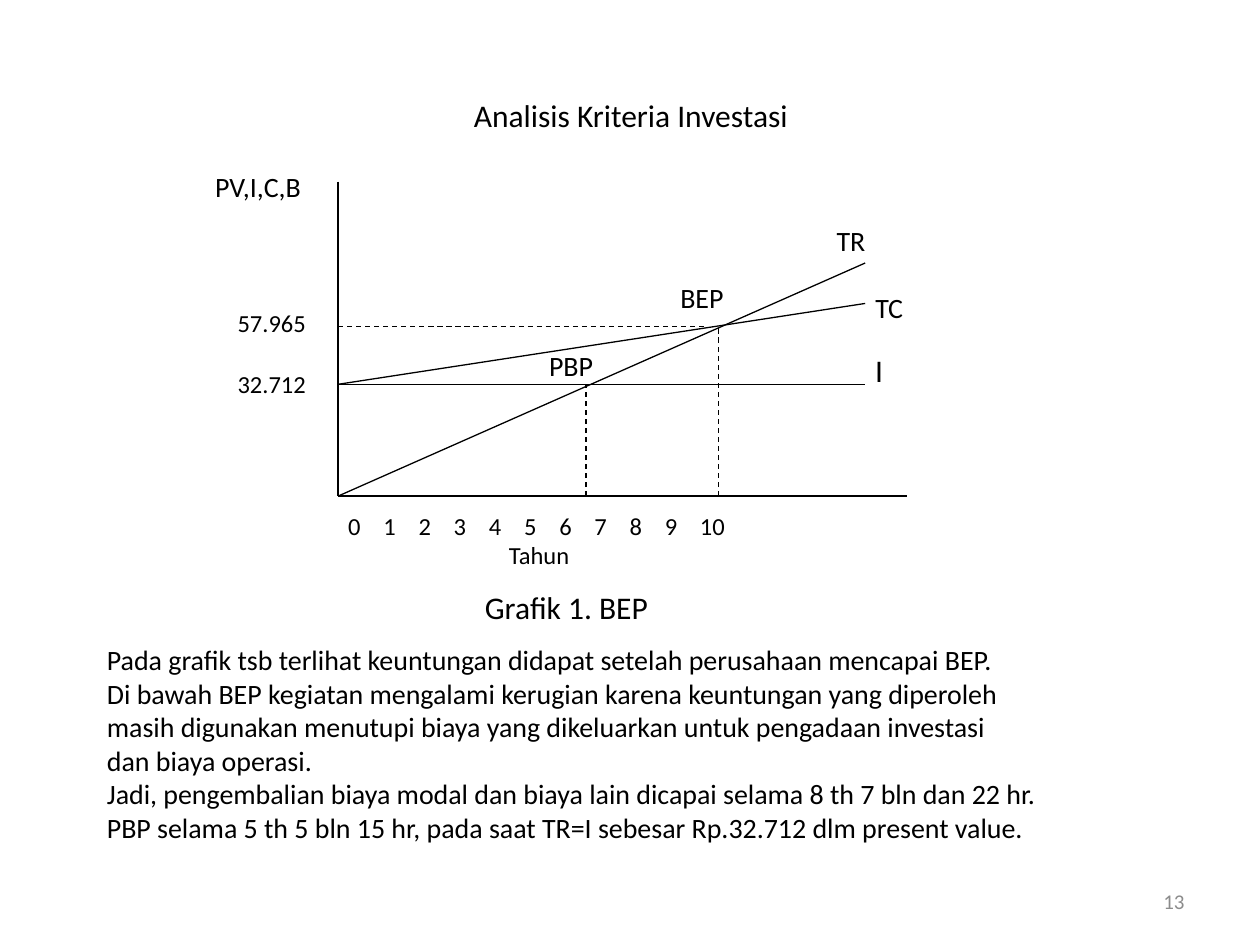
from pptx import Presentation
from pptx.dml.color import RGBColor
from pptx.enum.dml import MSO_LINE
from pptx.enum.shapes import MSO_CONNECTOR
from pptx.enum.text import MSO_ANCHOR, PP_ALIGN
from pptx.oxml import parse_xml
from pptx.oxml.ns import nsdecls, qn
from pptx.util import Pt
from lxml import etree

BLACK = RGBColor(0, 0, 0)
GRAY = RGBColor(0x8C, 0x8C, 0x8C)
FONT = "Calibri"


def style(paragraph, size, color=BLACK, alignment=PP_ALIGN.LEFT):
    paragraph.alignment = alignment
    paragraph.font.name = FONT
    paragraph.font.size = Pt(size)
    paragraph.font.color.rgb = color


def add_text(left, top, width, height, lines, size, inset=(5.76, 2.88), wrap=True):
    shape = slide.shapes.add_textbox(Pt(left), Pt(top), Pt(width), Pt(height))
    frame = shape.text_frame
    frame.word_wrap = wrap
    frame.margin_left = frame.margin_right = Pt(inset[0])
    frame.margin_top = frame.margin_bottom = Pt(inset[1])
    frame.text = "\n".join(lines)
    for paragraph in frame.paragraphs:
        style(paragraph, size)
    return frame


presentation = Presentation()
presentation.slide_width, presentation.slide_height = Pt(720), Pt(540)
presentation.element.set("firstSlideNum", "13")
slide = presentation.slides.add_slide(presentation.slide_layouts[5])

# Title
title = slide.shapes.title
title.left, title.top, title.width, title.height = Pt(36.5), Pt(20.5), Pt(648), Pt(90)
title.text_frame.text = "Analisis Kriteria Investasi"
title.text_frame.vertical_anchor = MSO_ANCHOR.MIDDLE
style(title.text_frame.paragraphs[0], 18, alignment=PP_ALIGN.CENTER)

# Axes, curves and dashed guides of the break-even diagram
origin_x, origin_y = 193.2, 283.5
curve_end = 494.4
investment_y, bep_y = 219.6, 186.5
pbp_x, bep_x = 334.8, 410.4
lines = [
    (origin_x, 103.8, origin_x, origin_y, False),
    (origin_x, origin_y, 518.4, origin_y, False),
    (origin_x, origin_y, curve_end, 150.3, False),
    (origin_x, investment_y, curve_end, investment_y, False),
    (origin_x, investment_y, curve_end, 173.4, False),
    (origin_x, bep_y, 403.2, bep_y, True),
    (pbp_x, origin_y, pbp_x, investment_y, True),
    (bep_x, origin_y, bep_x, bep_y, True),
]
for x1, y1, x2, y2, dashed in lines:
    connector = slide.shapes.add_connector(
        MSO_CONNECTOR.STRAIGHT, Pt(x1), Pt(y1), Pt(x2), Pt(y2))
    connector.line.color.rgb = BLACK
    connector.line.width = Pt(0.75)
    if dashed:
        connector.line.dash_style = MSO_LINE.DASH
    etree.SubElement(connector.element.spPr, qn("a:effectLst"))

# Diagram labels, with no right margin so that each stays on one line
labels = [
    ("PV,I,C,B", 117.2, 94, 60.5, 25, 16),
    ("57.965", 130, 173, 50.4, 22.5, 14),
    ("32.712", 130, 207.8, 50.4, 22.5, 14),
    ("TR", 472.3, 124.6, 28, 25, 16),
    ("TC", 494.4, 163.2, 27.4, 25, 16),
    ("I", 494.4, 197.8, 16, 27.4, 18),
    ("BEP", 383, 157.4, 36, 25, 16),
    ("PBP", 308, 196.2, 36.7, 25, 16),
]
for text, left, top, width, height, size in labels:
    label = add_text(left, top, width, height, [text], size, wrap=False)
    label.margin_right = 0

# Year scale on evenly spaced tab stops
years = "\t".join(str(year) for year in range(11))
scale = add_text(origin_x, 289, 229.7, 39.6, [years, "Tahun"], 14)
scale.paragraphs[1].alignment = PP_ALIGN.CENTER
properties = scale.paragraphs[0]._p.get_or_add_pPr()
tab_stops = parse_xml(f"<a:tabLst {nsdecls('a')}/>")
for year in range(1, 11):
    etree.SubElement(tab_stops, qn("a:tab"), pos=str(Pt(20.1 * year)), algn="l")
properties.find(qn("a:defRPr")).addprevious(tab_stops)

# Caption and explanation
explanation = add_text(54, 332.6, 638, 154.8, [
    "Grafik 1. BEP",
    "Pada grafik tsb terlihat keuntungan didapat setelah perusahaan mencapai BEP.",
    "Di bawah BEP kegiatan mengalami kerugian karena keuntungan yang diperoleh",
    "masih digunakan menutupi biaya yang dikeluarkan untuk pengadaan investasi",
    "dan biaya operasi.",
    "Jadi, pengembalian biaya modal dan biaya lain dicapai selama 8 th 7 bln dan 22 hr.",
    "PBP selama 5 th 5 bln 15 hr, pada saat TR=I sebesar Rp.32.712 dlm present value.",
], 16, inset=(7.2, 3.6))
caption = explanation.paragraphs[0]
caption.font.size = Pt(18)
caption.space_after = Pt(9.5)
caption._p.get_or_add_pPr().set("marL", str(Pt(216)))

# Slide number field
number = add_text(516, 500.5, 168, 28.8, [""], 12, inset=(7.2, 3.6))
number.vertical_anchor = MSO_ANCHOR.MIDDLE
style(number.paragraphs[0], 12, GRAY, PP_ALIGN.RIGHT)
number.paragraphs[0]._p.append(parse_xml(
    f'<a:fld {nsdecls("a")} id="{{B6F15528-21DE-4FAA-801E-634DDDAF4B2B}}" type="slidenum">'
    f'<a:rPr lang="id-ID" sz="1200"><a:solidFill><a:srgbClr val="{GRAY}"/></a:solidFill>'
    f'<a:latin typeface="{FONT}"/></a:rPr><a:t>13</a:t></a:fld>'))

presentation.save("out.pptx")
